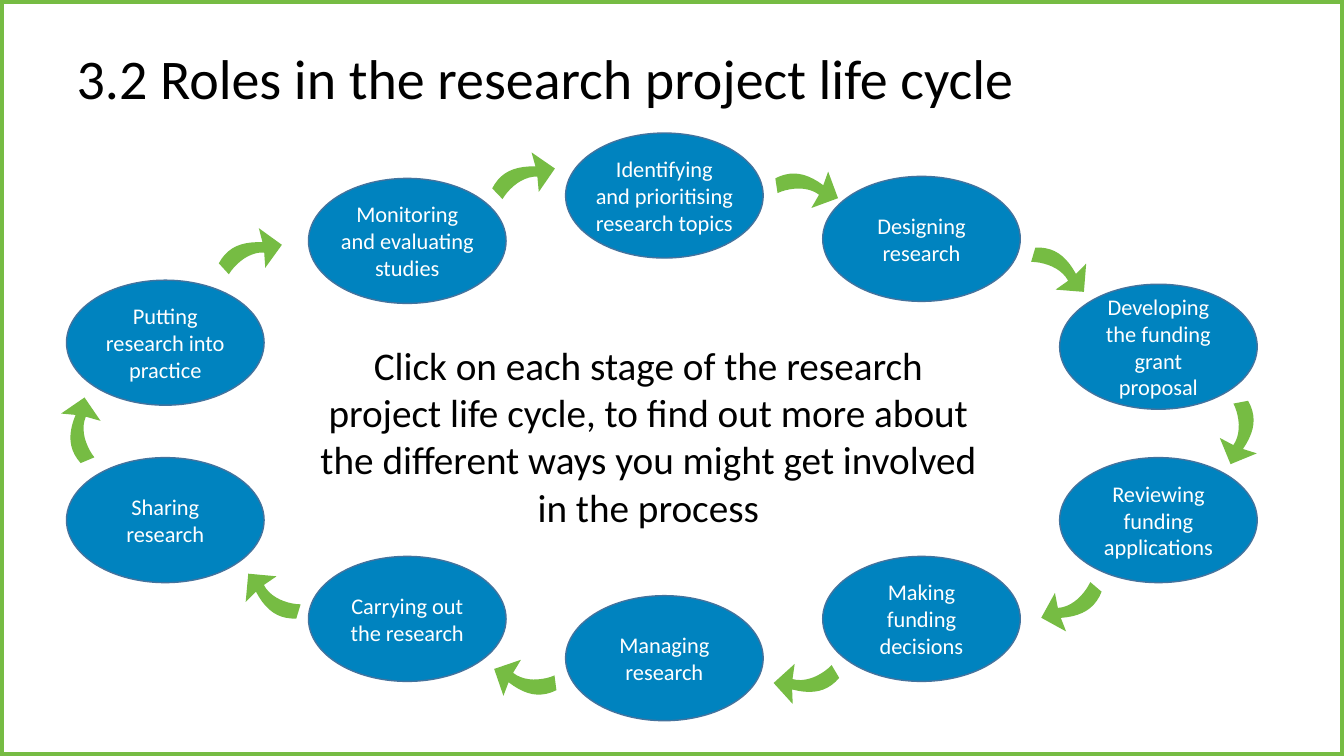
from pptx import Presentation
from pptx.dml.color import RGBColor
from pptx.enum.shapes import MSO_SHAPE
from pptx.enum.text import MSO_ANCHOR, MSO_AUTO_SIZE, PP_ALIGN
from pptx.util import Inches, Pt

GREEN, BLUE, EDGE = "76BC43", "0083BF", "43739E"
COLS = [0.66, 3.06, 5.61, 8.16, 10.51]
OVAL_W, OVAL_H = 1.96, 1.24


def paint(sp, fill=None, line=None, width=1):
    sp.shadow.inherit = False
    for part, color in ((sp.fill, fill), (sp.line.fill, line)):
        if color:
            part.solid()
            part.fore_color.rgb = RGBColor.from_string(color)
        else:
            part.background()
    if line:
        sp.line.width = Pt(width)


def write(sp, text, size, color, align, anchor, inset=0.1):
    tf = sp.text_frame
    tf.text = text
    frame = {"word_wrap": True, "auto_size": MSO_AUTO_SIZE.NONE,
             "vertical_anchor": anchor,
             "margin_left": Inches(inset), "margin_right": Inches(inset),
             "margin_top": Inches(0.05), "margin_bottom": Inches(0.05)}
    for name, value in frame.items():
        setattr(tf, name, value)
    for p in tf.paragraphs:
        p.alignment = align
        for r in p.runs:
            for name, value in {"size": Pt(size), "name": "Calibri"}.items():
                setattr(r.font, name, value)
            r.font.color.rgb = RGBColor.from_string(color)


prs = Presentation()
prs.slide_width, prs.slide_height = Inches(13.33), Inches(7.5)
s = prs.slides.add_slide(prs.slide_layouts[5])

curves = [
    [(0.07, 0), (0.25, 0.03), (0.35, 0.14), (0.41, 0.34)],
    [(0.32, 0.39), (0.28, 0.25), (0.13, 0.16), (0, 0.13)],
]
head = [(0.53, 0.26), (0.45, 0.53), (0.18, 0.45)]
steps = 10
bends = []
for a, b, c, d in curves:
    bends.append([
        tuple((1 - t) ** 3 * a[i] + 3 * t * (1 - t) ** 2 * b[i]
              + 3 * t ** 2 * (1 - t) * c[i] + t ** 3 * d[i] for i in (0, 1))
        for t in (n / steps for n in range(steps + 1))])
outline = [(Inches(x), Inches(y)) for x, y in bends[0] + head + bends[1]]

stages = [
    ("Identifying\nand prioritising research topics", 2, 1.32, 0, (7.74, 1.6, 323.2)),
    ("Designing research", 3, 1.75, 0.1, (10.25, 2.41, 348)),
    ("Developing the funding grant proposal", 4, 2.82, 0.1, (12.03, 4.03, 51.1)),
    ("Reviewing funding applications", 4, 4.54, 0.1, (10.36, 5.74, 102.3)),
    ("Making funding decisions", 3, 5.52, 0.1, (7.73, 6.49, 121.2)),
    ("Managing research", 2, 5.91, 0.1, (4.94, 6.48, 144.5)),
    ("Carrying out the research", 1, 5.52, 0.1, (2.43, 5.65, 168.7)),
    ("Sharing research", 0, 4.54, 0.04, (0.55, 4, 219)),
    ("Putting research into practice", 0, 2.78, 0.04, (2.22, 2.25, 289.3)),
    ("Monitoring and evaluating studies", 1, 1.77, 0, (4.93, 1.5, 288.1)),
]
for text, col, top, inset, (arrow_x, arrow_y, angle) in reversed(stages):
    fb = s.shapes.build_freeform(*outline[0])
    fb.add_line_segments(outline[1:], close=True)
    arrow = fb.convert_to_shape(Inches(arrow_x), Inches(arrow_y))
    arrow.rotation = angle
    paint(arrow, GREEN)

    oval = s.shapes.add_shape(MSO_SHAPE.OVAL, Inches(COLS[col]), Inches(top),
                              Inches(OVAL_W), Inches(OVAL_H))
    paint(oval, BLUE, EDGE)
    write(oval, text, 16, "FFFFFF", PP_ALIGN.CENTER, MSO_ANCHOR.MIDDLE, inset)

prompt = s.shapes.add_textbox(Inches(3.01), Inches(3.34), Inches(6.84), Inches(0.91))
write(prompt, "Click on each stage of the research project life cycle, to find out "
      "more about the different ways you might get involved in the process",
      28, "000000", PP_ALIGN.CENTER, MSO_ANCHOR.TOP)

title = s.shapes.title
place = {"left": 0.66, "top": 0.22, "width": 11.5, "height": 1.18}
for name, value in place.items():
    setattr(title, name, Inches(value))
write(title, "3.2 Roles in the research project life cycle",
      40, "000000", PP_ALIGN.LEFT, MSO_ANCHOR.MIDDLE)
title.text_frame.paragraphs[0].line_spacing = 0.9

border = s.shapes.add_shape(MSO_SHAPE.RECTANGLE, 0, 0, prs.slide_width, prs.slide_height)
paint(border, line=GREEN, width=6)

prs.save("out.pptx")
